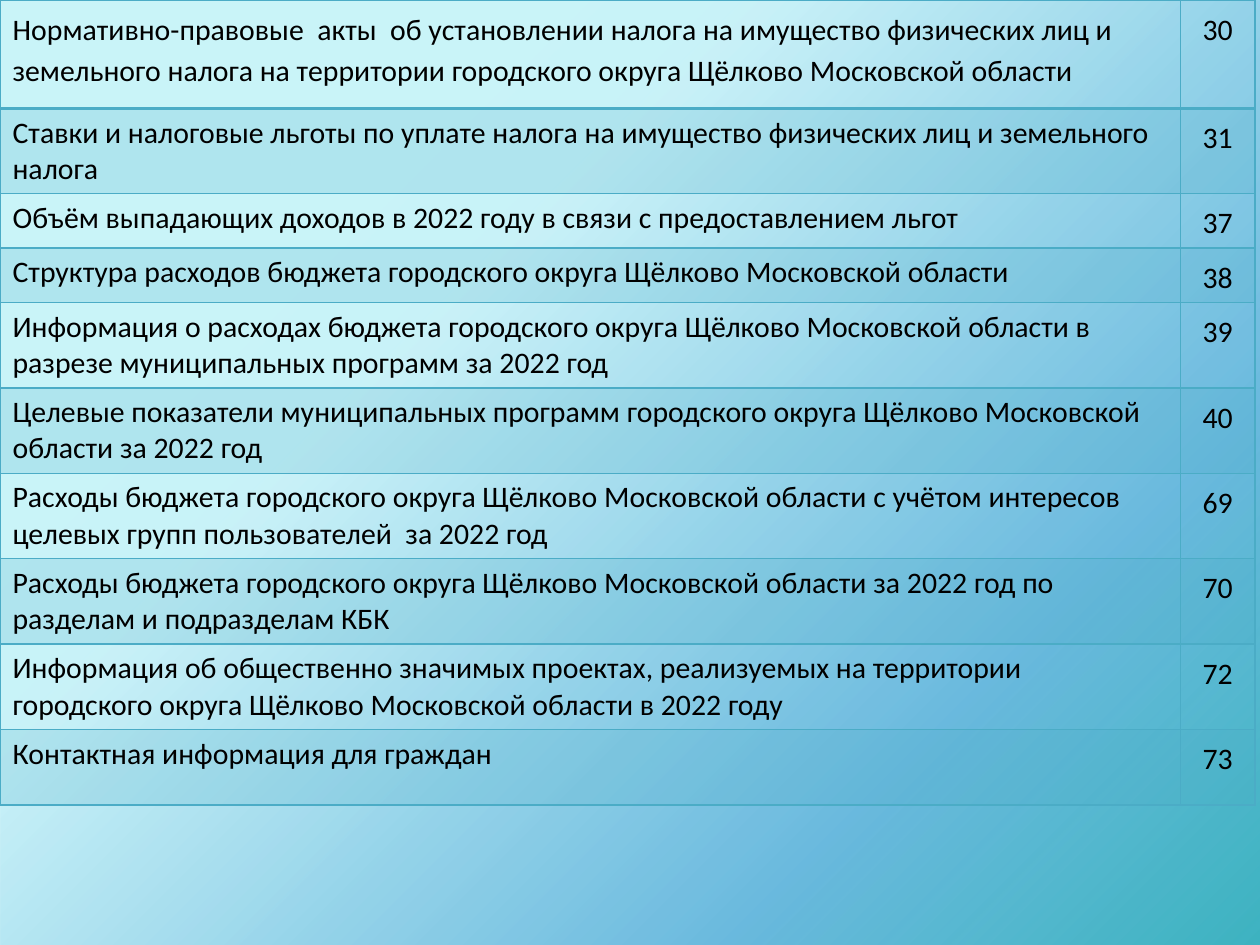
import pptx
import pptx.dml.color
import pptx.enum.shapes
import pptx.enum.text
import pptx.oxml.ns
import pptx.util
from lxml import etree

Inches = pptx.util.Inches
Pt = pptx.util.Pt
qn = pptx.oxml.ns.qn

COLORS = {
    "white": "FFFFFF",
    "teal": "4BACC6",
    "black": "000000",
    "cyan": "21D6E0",
    "blue": "0087E6",
    "green": "03D4A8",
    "navy": "005CBF",
}
PAGE_STOPS = [(0, "white", 100), (35, "white", 100), (100, "teal", 100)]
VEIL_STOPS = [(25, "cyan", 23), (75, "blue", 25), (100, "green", 18), (100, "navy", 26)]
CONTENTS = [
    ("Нормативно-правовые  акты  об установлении налога на имущество физических лиц и "
     "земельного налога на территории городского округа Щёлково Московской области", "30", 0.86),
    ("Ставки и налоговые льготы по уплате налога на имущество физических лиц и "
     "земельного налога", "31", 0.65),
    ("Объём выпадающих доходов в 2022 году в связи с предоставлением льгот", "37", 0.4),
    ("Структура расходов бюджета городского округа Щёлково Московской области", "38", 0.39),
    ("Информация о расходах бюджета городского округа Щёлково Московской области в "
     "разрезе муниципальных программ за 2022 год", "39", 0.65),
    ("Целевые показатели муниципальных программ городского округа Щёлково Московской "
     "области за 2022 год", "40", 0.65),
    ("Расходы бюджета городского округа Щёлково Московской области с учётом интересов "
     "целевых групп пользователей  за 2022 год", "69", 0.65),
    ("Расходы бюджета городского округа Щёлково Московской области за 2022 год по "
     "разделам и подразделам КБК", "70", 0.65),
    ("Информация об общественно значимых проектах, реализуемых на территории "
     "городского округа Щёлково Московской области в 2022 году", "72", 0.65),
    ("Контактная информация для граждан", "73", 0.6),
]


def rgb(name):
    """Return the named colour."""
    return pptx.dml.color.RGBColor.from_string(COLORS[name])


def add_color(parent, name, opacity=100):
    """Add a colour element with an opacity in percent."""
    color = etree.SubElement(parent, qn("a:srgbClr"), val=COLORS[name])
    if opacity < 100:
        etree.SubElement(color, qn("a:alpha"), val=str(opacity * 1000))


def paint_gradient(fill, element, stops):
    """Fill with a diagonal gradient of (percent, colour, opacity) stops."""
    fill.gradient()
    fill.gradient_angle = 315
    stop_list = next(element.iter(qn("a:gsLst")))
    for stop in list(stop_list):
        stop_list.remove(stop)
    for position, name, opacity in stops:
        stop = etree.SubElement(stop_list, qn("a:gs"), pos=str(position * 1000))
        add_color(stop, name, opacity)


def add_backdrop(slide, left, top, width, height):
    """Paint the page and lay a translucent veil over it."""
    paint_gradient(slide.background.fill, slide.element, PAGE_STOPS)
    veil = slide.shapes.add_shape(
        pptx.enum.shapes.MSO_SHAPE.RECTANGLE, left, top, width, height)
    veil.shadow.inherit = False
    veil.line.fill.background()
    paint_gradient(veil.fill, veil.element, VEIL_STOPS)


def style_cell(cell, shaded, bottom_width):
    """Give a cell its borders and its band fill."""
    properties = cell._tc.get_or_add_tcPr()
    for side, width in (("L", 1), ("R", 1), ("T", 1), ("B", bottom_width)):
        border = etree.SubElement(properties, qn(f"a:ln{side}"), w=str(Pt(width)))
        add_color(etree.SubElement(border, qn("a:solidFill")), "teal")
    if shaded:
        add_color(etree.SubElement(properties, qn("a:solidFill")), "teal", 20)
    else:
        cell.fill.background()


def write_cell(cell, text, centered, spaced):
    """Write one paragraph into a cell."""
    paragraph = cell.text_frame.paragraphs[0]
    if centered:
        paragraph.alignment = pptx.enum.text.PP_ALIGN.CENTER
    if spaced:
        paragraph.line_spacing = 1.15
        paragraph.space_after = Pt(10)
    run = paragraph.add_run()
    run.text = text
    run.font.size = Pt(17)
    run.font.name = "Calibri"
    run.font.color.rgb = rgb("black")


def add_contents(slide, left, top, width, height):
    """Add the table of section titles and page numbers."""
    table = slide.shapes.add_table(len(CONTENTS), 2, left, top, width, height).table
    table.first_row = False
    table.horz_banding = False
    page_width = Inches(0.59)
    table.columns[0].width = width - page_width
    table.columns[1].width = page_width
    for index, (title, page, row_height) in enumerate(CONTENTS):
        table.rows[index].height = Inches(row_height)
        for column, text in enumerate((title, page)):
            cell = table.cell(index, column)
            style_cell(cell, index % 2 == 1, 2 if index == 0 else 1)
            write_cell(cell, text, column == 1, column == 1 or index == 0)


def main():
    """Build and save the contents slide."""
    presentation = pptx.Presentation()
    presentation.slide_width = Inches(10)
    presentation.slide_height = Inches(7.5)
    slide = presentation.slides.add_slide(presentation.slide_layouts[6])
    add_backdrop(slide, 0, 0, Inches(10), Inches(7.67))
    add_contents(slide, 0, 0, Inches(9.96), Inches(6.31))
    presentation.save("out.pptx")


if __name__ == "__main__":
    main()
